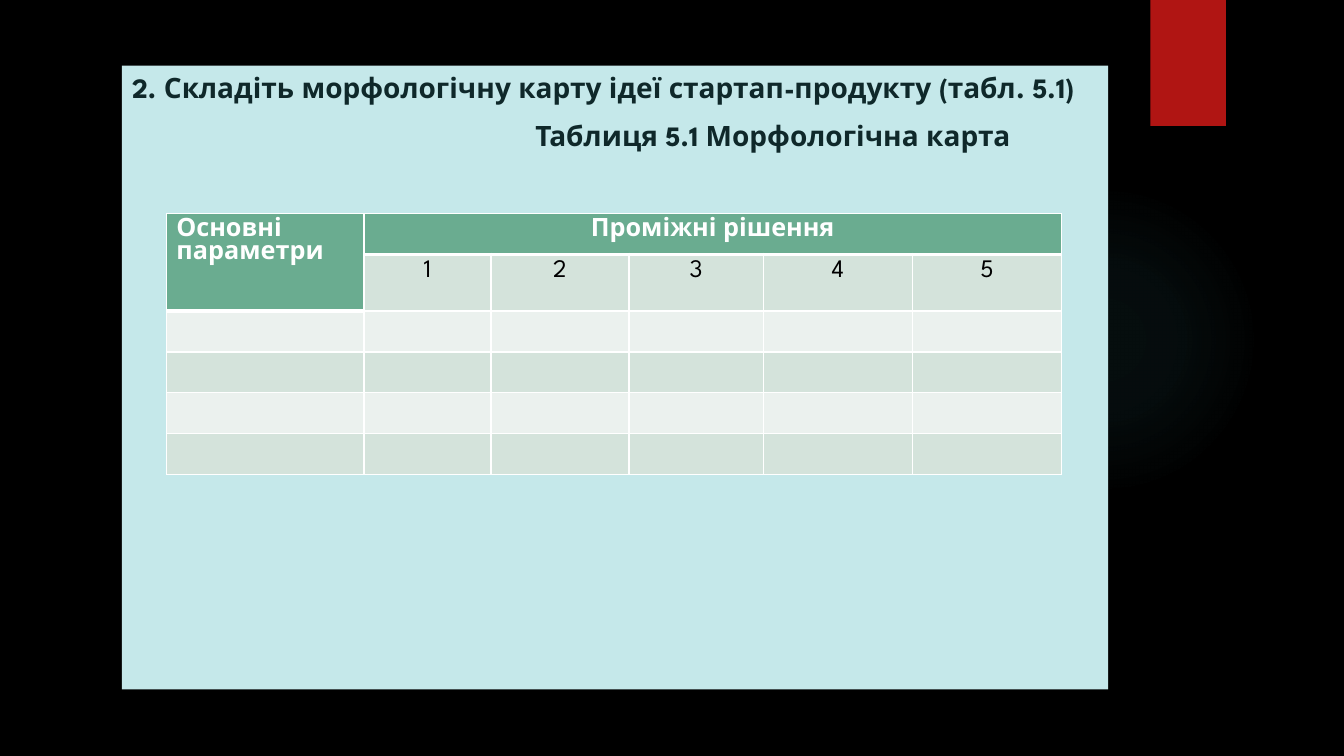
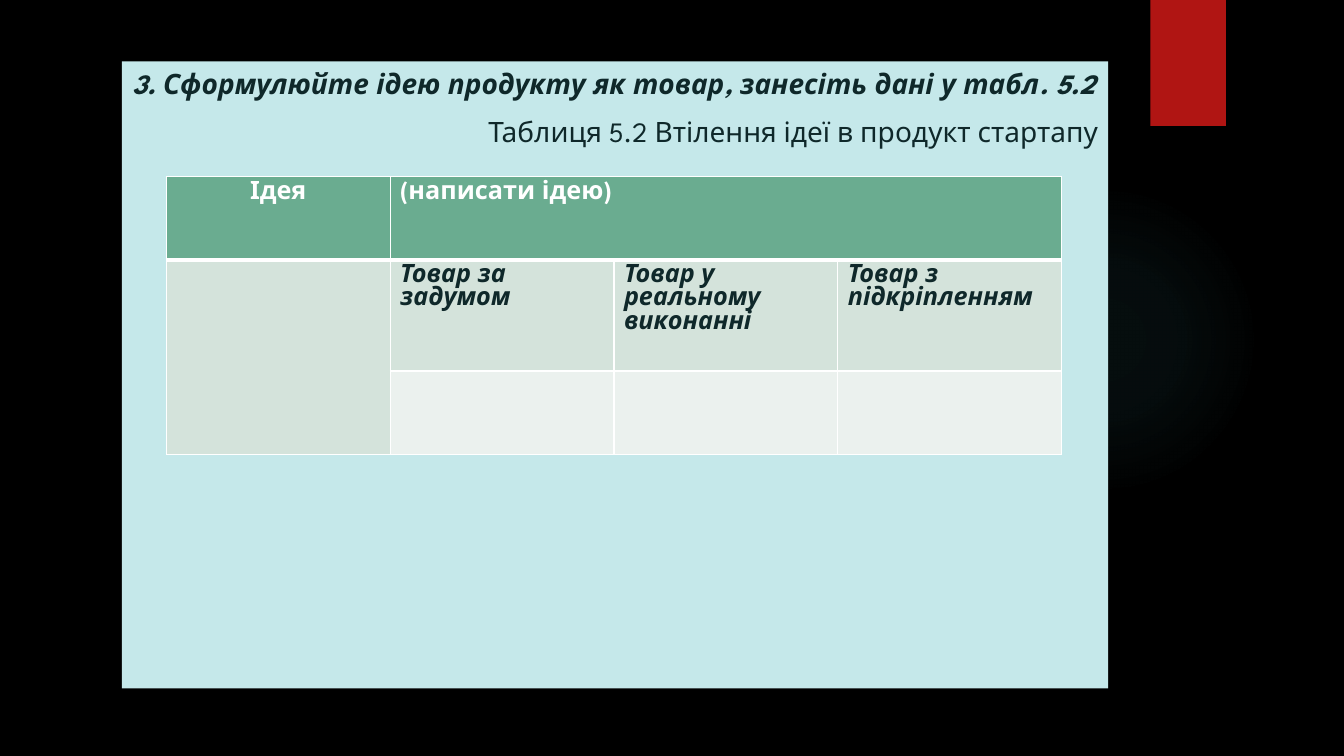
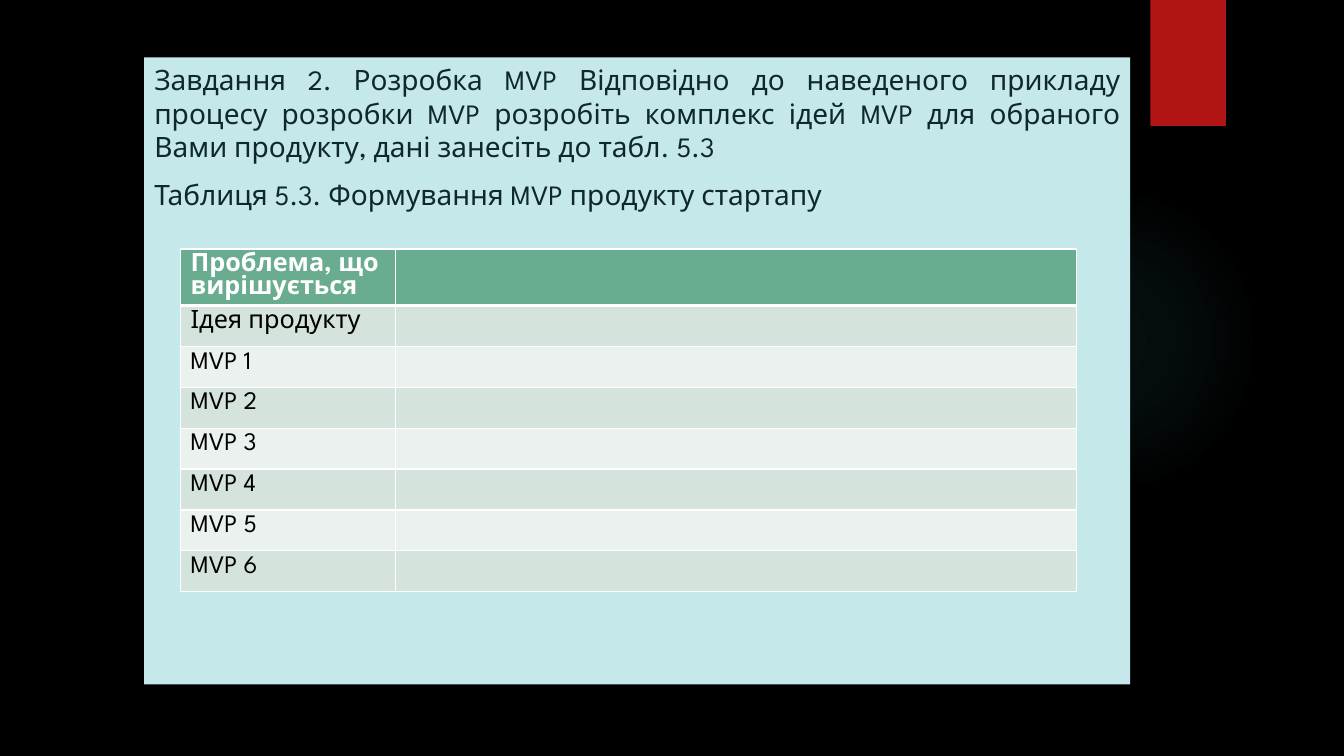
from pptx import Presentation
from pptx.dml.color import RGBColor
from pptx.enum.shapes import MSO_SHAPE
from pptx.enum.text import MSO_ANCHOR, MSO_AUTO_SIZE, PP_ALIGN
from pptx.oxml import parse_xml
from pptx.oxml.ns import nsdecls, qn
from pptx.util import Inches, Pt

BLACK = RGBColor(0x00, 0x00, 0x00)
WHITE = RGBColor(0xFF, 0xFF, 0xFF)
RED = RGBColor(0xB0, 0x15, 0x13)
GLOW = RGBColor(0x50, 0xB9, 0xC1)
PANEL = RGBColor(0xC5, 0xE8, 0xEA)
INK = RGBColor(0x0F, 0x28, 0x2A)
HEADER = RGBColor(0x6A, 0xAC, 0x90)
BANDS = (RGBColor(0xEB, 0xF1, 0xEE), RGBColor(0xD4, 0xE3, 0xDB))

FONT = "League Spartan"
TITLE_ONLY = 5
ROW_HEIGHT = 2.43 / 6


class Deck:
    """Holds the presentation, its shared style and the current slide."""

    def __init__(self):
        self.presentation = Presentation()
        self.presentation.slide_width = Inches(13.33)
        self.presentation.slide_height = Inches(7.5)
        self.layout = self.presentation.slide_layouts[TITLE_ONLY]
        self.slide = None
        fill = self.presentation.slide_master.background.fill
        fill.solid()
        fill.fore_color.rgb = BLACK

    def new_slide(self):
        first = self.slide is None
        self.slide = self.presentation.slides.add_slide(self.layout)
        if first:
            self.decorate_layout()

    def decorate_layout(self):
        """Draw the glow and the red band, then move them to the shared layout."""
        glow = self.plain_shape(MSO_SHAPE.OVAL, 9.41, 1.83, 3.08, 3.08, GLOW)
        stops = "".join(
            f'<a:gs pos="{position}000"><a:srgbClr val="{GLOW}">'
            f'<a:alpha val="{alpha}000"/></a:srgbClr></a:gs>'
            for position, alpha in ((0, 7), (36, 6), (69, 0))
        )
        gradient = parse_xml(
            f'<a:gradFill {nsdecls("a")}><a:gsLst>{stops}</a:gsLst>'
            '<a:path path="circle"><a:fillToRect l="50000" t="50000" '
            'r="50000" b="50000"/></a:path></a:gradFill>'
        )
        properties = glow.element.spPr
        properties.replace(properties.find(qn("a:solidFill")), gradient)
        band = self.plain_shape(MSO_SHAPE.RECTANGLE, 11.41, 0, 0.75, 1.25, RED)
        for number, shape in enumerate((glow, band), start=101):
            shape.element.nvSpPr.cNvPr.set("id", str(number))
            self.layout.shapes.element.append(shape.element)

    def plain_shape(self, kind, left, top, width, height, color):
        shape = self.slide.shapes.add_shape(
            kind, Inches(left), Inches(top), Inches(width), Inches(height))
        shape.shadow.inherit = False
        shape.fill.solid()
        shape.fill.fore_color.rgb = color
        shape.line.fill.background()
        return shape

    def style(self, paragraph, size, color, bold=False, italic=False):
        for run in paragraph.runs:
            font = run.font
            font.name, font.size = FONT, Pt(size)
            font.bold, font.italic = bold, italic
            font.color.rgb = color

    def title_panel(self, left, top, height, heading, caption, bold=False,
                    italic=False, caption_bold=False, caption_indent=0,
                    caption_alignment=PP_ALIGN.JUSTIFY):
        panel = self.slide.shapes.title
        panel.left, panel.top = Inches(left), Inches(top)
        panel.width, panel.height = Inches(9.78), Inches(height)
        panel.fill.solid()
        panel.fill.fore_color.rgb = PANEL
        frame = panel.text_frame
        frame.word_wrap = True
        frame.auto_size = MSO_AUTO_SIZE.NONE
        frame.vertical_anchor = MSO_ANCHOR.TOP
        frame.text = f"{heading}\n{caption}"
        heading_paragraph, caption_paragraph = frame.paragraphs
        heading_paragraph.alignment = PP_ALIGN.JUSTIFY
        self.style(heading_paragraph, 20, INK, bold, italic)
        caption_paragraph.alignment = caption_alignment
        caption_paragraph.space_before = Pt(10)
        if caption_indent:
            caption_paragraph._p.get_or_add_pPr().set(
                "marL", str(Inches(caption_indent)))
        self.style(caption_paragraph, 20, INK, caption_bold)

    def cell_borders(self, cell, row):
        """White lines, thick under the header; only the header has a top line."""
        widths = {"lnL": 1, "lnR": 1, "lnT": 1, "lnB": 1 if row else 3}
        if row:
            del widths["lnT"]
        properties = cell._tc.get_or_add_tcPr()
        for index, (side, width) in enumerate(widths.items()):
            properties.insert(index, parse_xml(
                f'<a:{side} {nsdecls("a")} w="{Pt(width)}"><a:solidFill>'
                f'<a:srgbClr val="{WHITE}"/></a:solidFill></a:{side}>'))

    def table(self, left, top, column_widths, row_heights, texts, merges=(),
              centred=(), body_style=None):
        """Texts are keyed by (row, column); merges are pairs of corner cells."""
        body_style = body_style or {"color": BLACK}
        table = self.slide.shapes.add_table(
            len(row_heights), len(column_widths), Inches(left), Inches(top),
            Inches(sum(column_widths)), Inches(sum(row_heights))).table
        for column, width in zip(table.columns, column_widths):
            column.width = Inches(width)
        for row, height in zip(table.rows, row_heights):
            row.height = Inches(height)
        for row in range(len(row_heights)):
            for column in range(len(column_widths)):
                cell = table.cell(row, column)
                cell.fill.solid()
                cell.fill.fore_color.rgb = BANDS[row % 2] if row else HEADER
                self.cell_borders(cell, row)
        for first, last in merges:
            table.cell(*first).merge(table.cell(*last))
        for position, text in texts.items():
            cell = table.cell(*position)
            cell.text_frame.text = text
            paragraph = cell.text_frame.paragraphs[0]
            if position in centred:
                paragraph.alignment = PP_ALIGN.CENTER
            in_header = position[0] == 0
            self.style(paragraph, 18,
                       **({"color": WHITE, "bold": True} if in_header else body_style))


def morphological_map(deck):
    deck.new_slide()
    deck.title_panel(
        1.21, 0.65, 6.19,
        "2. Складіть морфологічну карту ідеї стартап-продукту (табл. 5.1)",
        "Таблиця 5.1 Морфологічна карта",
        bold=True, caption_bold=True, caption_indent=4)
    numbers = {(1, column): str(column) for column in range(1, 6)}
    deck.table(
        1.65, 2.12, [1.96, 1.26, 1.37, 1.33, 1.48, 1.48], [ROW_HEIGHT] * 6,
        {(0, 0): "Основні параметри", (0, 1): "Проміжні рішення", **numbers},
        merges=[((0, 0), (1, 0)), ((0, 1), (0, 5))],
        centred=[(0, 1), *numbers])


def product_idea(deck):
    deck.new_slide()
    deck.title_panel(
        1.21, 0.61, 6.22,
        "3. Сформулюйте ідею продукту як товар, занесіть дані у табл. 5.2",
        "Таблиця 5.2 Втілення ідеї в продукт стартапу",
        bold=True, italic=True, caption_alignment=PP_ALIGN.RIGHT)
    deck.table(
        1.65, 1.75, [2.22] * 4, [0.83, 1.1, 0.83],
        {(0, 0): "Ідея", (0, 1): "(написати ідею)",
         (1, 1): "Товар за задумом",
         (1, 2): "Товар у реальному виконанні",
         (1, 3): "Товар з підкріпленням"},
        merges=[((0, 1), (0, 3)), ((1, 0), (2, 0))],
        centred=[(0, 0)],
        body_style={"color": INK, "bold": True, "italic": True})


def mvp_forming(deck):
    deck.new_slide()
    deck.title_panel(
        1.43, 0.57, 6.22,
        "Завдання 2. Розробка MVP Відповідно до наведеного прикладу процесу "
        "розробки MVP розробіть комплекс ідей MVP для обраного Вами продукту, "
        "дані занесіть до табл. 5.3",
        "Таблиця 5.3. Формування MVP продукту стартапу")
    labels = ["Проблема, що вирішується", "Ідея продукту",
              *(f"MVP {number}" for number in range(1, 7))]
    deck.table(
        1.79, 2.47, [2.13, 6.76], [ROW_HEIGHT] * len(labels),
        {(row, 0): label for row, label in enumerate(labels)})


def main():
    deck = Deck()
    morphological_map(deck)
    product_idea(deck)
    mvp_forming(deck)
    deck.presentation.save("out.pptx")


if __name__ == "__main__":
    main()
